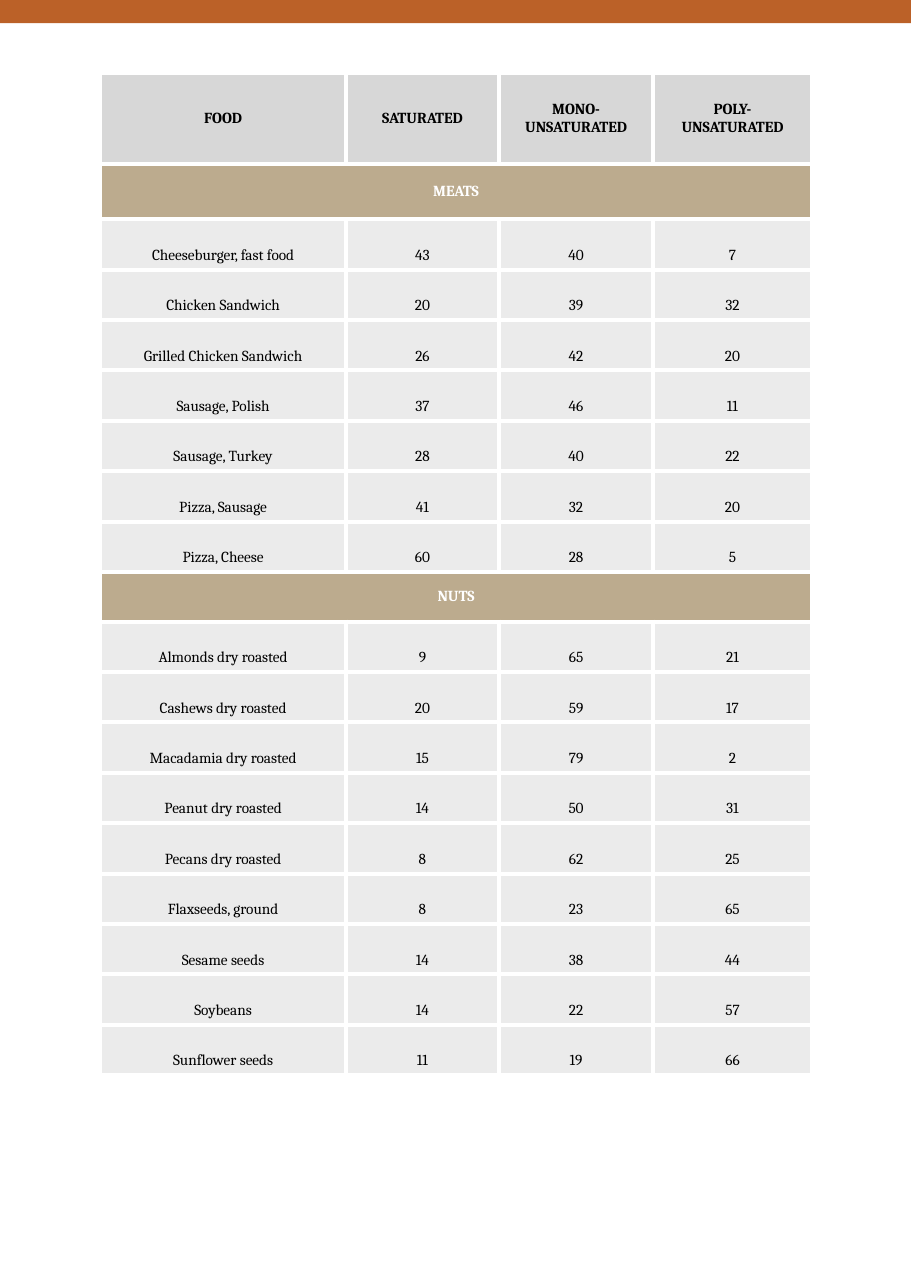
import pptx
import pptx.util
import pptx.dml.color
import pptx.enum.shapes
import pptx.enum.text
import lxml.etree

HEAD = ["FOOD", "SATURATED", "MONO-\nUNSATURATED", "POLY-\nUNSATURATED"]
GROUPS = {
    "MEATS": [
        ("Cheeseburger, fast food", 43, 40, 7),
        ("Chicken Sandwich", 20, 39, 32),
        ("Grilled Chicken Sandwich", 26, 42, 20),
        ("Sausage, Polish", 37, 46, 11),
        ("Sausage, Turkey", 28, 40, 22),
        ("Pizza, Sausage", 41, 32, 20),
        ("Pizza, Cheese", 60, 28, 5),
    ],
    "NUTS": [
        ("Almonds dry roasted", 9, 65, 21),
        ("Cashews dry roasted", 20, 59, 17),
        ("Macadamia dry roasted", 15, 79, 2),
        ("Peanut dry roasted", 14, 50, 31),
        ("Pecans dry roasted", 8, 62, 25),
        ("Flaxseeds, ground", 8, 23, 65),
        ("Sesame seeds", 14, 38, 44),
        ("Soybeans", 14, 22, 57),
        ("Sunflower seeds", 11, 19, 66),
    ],
}
COLS = [2.23, 1.39, 1.4, 1.44]
TOPS = [0.83, 0.5]
ROW = 0.45
WIDE, HIGH = 8.27, 11.69
LEFT, TOP = 0.91, 0.66
FONT = "Cambria"
BAR, GREY, TAN, PALE = "BB6128", "D7D7D7", "BCAB8E", "EBEBEB"
BLACK, WHITE = "000000", "FFFFFF"

Inches = pptx.util.Inches
Pt = pptx.util.Pt
ANCHOR = pptx.enum.text.MSO_ANCHOR
CENTER = pptx.enum.text.PP_ALIGN.CENTER


def paint(fill, color):
    fill.solid()
    fill.fore_color.rgb = pptx.dml.color.RGBColor.from_string(color)


def write(cell, text, color=BLACK, bold=False, space=None, anchor=ANCHOR.TOP):
    cell.vertical_anchor = anchor
    cell.text_frame.text = text
    for para in cell.text_frame.paragraphs:
        para.alignment = CENTER
        if space:
            para.line_spacing = space
        for run in para.runs:
            run.font.name = FONT
            run.font.size = Pt(10)
            run.font.bold = bold
            paint(run.font.fill, color)


def border(cell, color, width):
    props = cell._tc.get_or_add_tcPr()
    space = props.nsmap["a"]
    for side in ("lnL", "lnR", "lnT", "lnB"):
        line = lxml.etree.SubElement(props, f"{{{space}}}{side}", w=str(Pt(width)))
        solid = lxml.etree.SubElement(line, f"{{{space}}}solidFill")
        lxml.etree.SubElement(solid, f"{{{space}}}srgbClr", val=color)


def main():
    deck = pptx.Presentation()
    deck.slide_width, deck.slide_height = Inches(WIDE), Inches(HIGH)
    slide = deck.slides.add_slide(deck.slide_layouts[6])

    bar = slide.shapes.add_shape(
        pptx.enum.shapes.MSO_SHAPE.RECTANGLE, 0, 0, Inches(WIDE), Inches(0.21))
    bar.shadow.inherit = False
    bar.line.fill.background()
    paint(bar.fill, BAR)

    strong = {"bold": True, "anchor": ANCHOR.MIDDLE}
    rows = [(HEAD, GREY, strong)]
    for name, foods in GROUPS.items():
        rows.append(([name], TAN, {**strong, "color": WHITE}))
        rows += [(food, PALE, {"space": 2.23}) for food in foods]
    sizes = TOPS + [ROW] * (len(rows) - len(TOPS))

    table = slide.shapes.add_table(
        len(rows), len(COLS), Inches(LEFT), Inches(TOP),
        Inches(sum(COLS)), Inches(sum(sizes))).table
    table.first_row = table.horz_banding = False
    for col, width in zip(table.columns, COLS):
        col.width = Inches(width)
    for row, size, (texts, fill, style) in zip(table.rows, sizes, rows):
        row.height = Inches(size)
        cells = list(row.cells)
        if len(texts) == 1:
            cells[0].merge(cells[-1])
        for cell, text in zip(cells, texts):
            border(cell, WHITE, 3)
            write(cell, str(text), **style)
        for cell in cells:
            paint(cell.fill, fill)

    deck.save("out.pptx")


if __name__ == "__main__":
    main()
